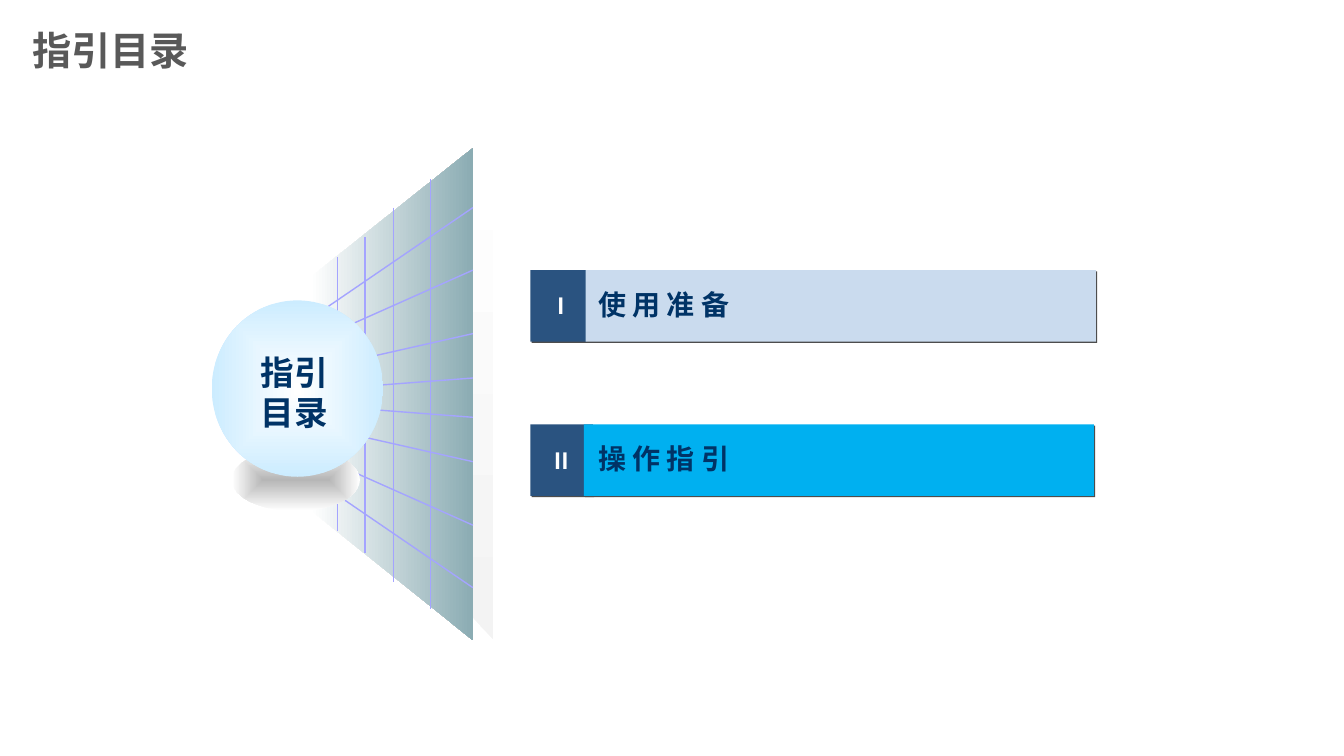
from dataclasses import dataclass
from typing import Optional

from lxml.etree import SubElement
from pptx import Presentation
from pptx.dml.color import RGBColor
from pptx.enum.shapes import MSO_CONNECTOR, MSO_SHAPE as Preset
from pptx.enum.text import MSO_ANCHOR as Anchor, PP_ALIGN as Align
from pptx.oxml.ns import qn
from pptx.util import Inches, Pt

FONT = "Noto Sans CJK SC"
NAVY = "003366"
MIRROR_SUM = 7.89  # top y + bottom y of each mirrored ray


@dataclass
class Chapter:
    number: str
    title: str
    bar_left: float
    bar_color: str


@dataclass
class Ray:
    left_y: float
    right_y: float
    left_x: float


@dataclass
class Upright:
    x: float
    top: float
    bottom: float


CHAPTERS = [
    Chapter("I", "使 用 准 备", 5.81, "CADBEE"),
    Chapter("Ⅱ", "操 作 指 引", 5.79, "00B0F0"),
]
RAYS = [Ray(3.38, 2.68, 3.12), Ray(3.68, 3.31, 3.05),
        Ray(3.87, 3.75, 3.12), Ray(3.14, 2.06, 3.11)]
UPRIGHTS = [Upright(4.27, 1.78, 6.04), Upright(3.9, 2.06, 5.77),
            Upright(3.62, 2.35, 5.49), Upright(3.35, 2.55, 5.27)]

deck = Presentation()
deck.slide_width, deck.slide_height = Inches(13.33), Inches(7.5)
slide = deck.slides.add_slide(deck.slide_layouts[6])
shapes = slide.shapes


def color(value: str) -> RGBColor:
    return RGBColor.from_string(value)


def add_preset(preset, left: float, top: float, width: float, height: float,
               fill: Optional[str] = None):
    shape = shapes.add_shape(preset, Inches(left), Inches(top), Inches(width), Inches(height))
    shape.shadow.inherit = False
    shape.line.fill.background()
    if fill:
        shape.fill.solid()
        shape.fill.fore_color.rgb = color(fill)
    else:
        shape.fill.background()
    return shape


def add_hard_shadow(shape) -> None:
    effects = shape._element.spPr.find(qn("a:effectLst"))
    shadow = SubElement(effects, qn("a:outerShdw"), blurRad="0", dist=str(Pt(1.4)),
                        dir="2700000", algn="tl", rotWithShape="0")
    SubElement(shadow, qn("a:srgbClr"), val="4D4D4D")


def set_gradient(shape, first: str, last: str, angle: Optional[float] = None) -> None:
    """Linear at the given angle, or from the centre outwards without one."""
    shape.fill.gradient()
    for stop, value in zip(shape.fill.gradient_stops, (first, last)):
        stop.color.rgb = color(value)
    if angle is not None:
        shape.fill.gradient_angle = angle
        return
    gradient = shape._element.spPr.find(qn("a:gradFill"))
    gradient.remove(gradient.find(qn("a:lin")))
    centre = SubElement(gradient, qn("a:path"), path="shape")
    SubElement(centre, qn("a:fillToRect"), l="50000", t="50000", r="50000", b="50000")


def write(shape, lines: list[str], size: float, ink: str, align=Align.LEFT,
          anchor=Anchor.MIDDLE, wrap: bool = False, spacing: float = 1.0) -> None:
    frame = shape.text_frame
    frame.word_wrap = wrap
    frame.vertical_anchor = anchor
    for index, line in enumerate(lines):
        paragraph = frame.add_paragraph() if index else frame.paragraphs[0]
        paragraph.alignment = align
        paragraph.line_spacing = spacing
        run = paragraph.add_run()
        run.text = line
        run.font.name, run.font.size, run.font.bold = FONT, Pt(size), True
        run.font.color.rgb = color(ink)
        SubElement(run.font._element, qn("a:ea"), typeface=FONT)


def add_panel(points: list[tuple[float, float]], first: str, last: str, angle: float) -> None:
    corners = [(Inches(x), Inches(y)) for x, y in points]
    builder = shapes.build_freeform(*corners[0])
    builder.add_line_segments(corners[1:], close=True)
    panel = builder.convert_to_shape()
    panel.shadow.inherit = False
    panel.line.fill.background()
    set_gradient(panel, first, last, angle)


def add_grid_line(x1: float, y1: float, x2: float, y2: float) -> None:
    line = shapes.add_connector(MSO_CONNECTOR.STRAIGHT, Inches(x1), Inches(y1),
                                Inches(x2), Inches(y2))
    line.line.color.rgb = color("A4A4FF")
    line.line.width = Pt(1)
    SubElement(line._element.spPr, qn("a:effectLst"))


def add_text(left: float, top: float, width: float, height: float):
    return shapes.add_textbox(Inches(left), Inches(top), Inches(width), Inches(height))


# Chapter rows
for row, chapter in enumerate(CHAPTERS):
    top = 2.68 + 1.53 * row
    number = add_preset(Preset.RECTANGLE, 5.26, top, 0.62, 0.71, "2A5380")
    add_hard_shadow(number)
    write(number, [chapter.number], 16, "FFFFFF", Align.CENTER)
    add_hard_shadow(add_preset(Preset.RECTANGLE, chapter.bar_left, top, 5.06, 0.71,
                               chapter.bar_color))
    label = add_preset(Preset.ROUNDED_RECTANGLE, 5.81, top + 0.08, 4.8, 0.51)
    write(label, [chapter.title], 20, NAVY)

# Fan: edge and face
add_panel([(4.89, 6.34), (4.64, 6.07), (4.64, 1.74), (4.89, 1.47)], "FFFFFF", "F3F3F3", 270)
add_panel([(4.69, 6.35), (3.08, 5.06), (3.08, 2.75), (4.69, 1.47)], "FFFFFF", "8BACB3", 0)

# Grid on the fan
for ray in RAYS:
    add_grid_line(ray.left_x, ray.left_y, 4.69, ray.right_y)
    add_grid_line(ray.left_x, MIRROR_SUM - ray.left_y, 4.69, MIRROR_SUM - ray.right_y)
for upright in UPRIGHTS:
    add_grid_line(upright.x, upright.top, upright.x, upright.bottom)

# Ball with its ground shade
set_gradient(add_preset(Preset.OVAL, 2.3, 4.45, 1.27, 0.62), "B6B6B6", "FFFFFF")
set_gradient(add_preset(Preset.OVAL, 2.1, 2.98, 1.7, 1.75), "FFFFFF", "CCECFF")
write(add_text(2.48, 3.44, 0.88, 0.91), ["指引", "目录"], 24, NAVY, Align.CENTER, Anchor.TOP)

# Slide heading
write(add_text(0.22, 0.17, 10.54, 0.7), ["指引目录"], 28, "595959", wrap=True, spacing=0.9)

deck.save("out.pptx")
